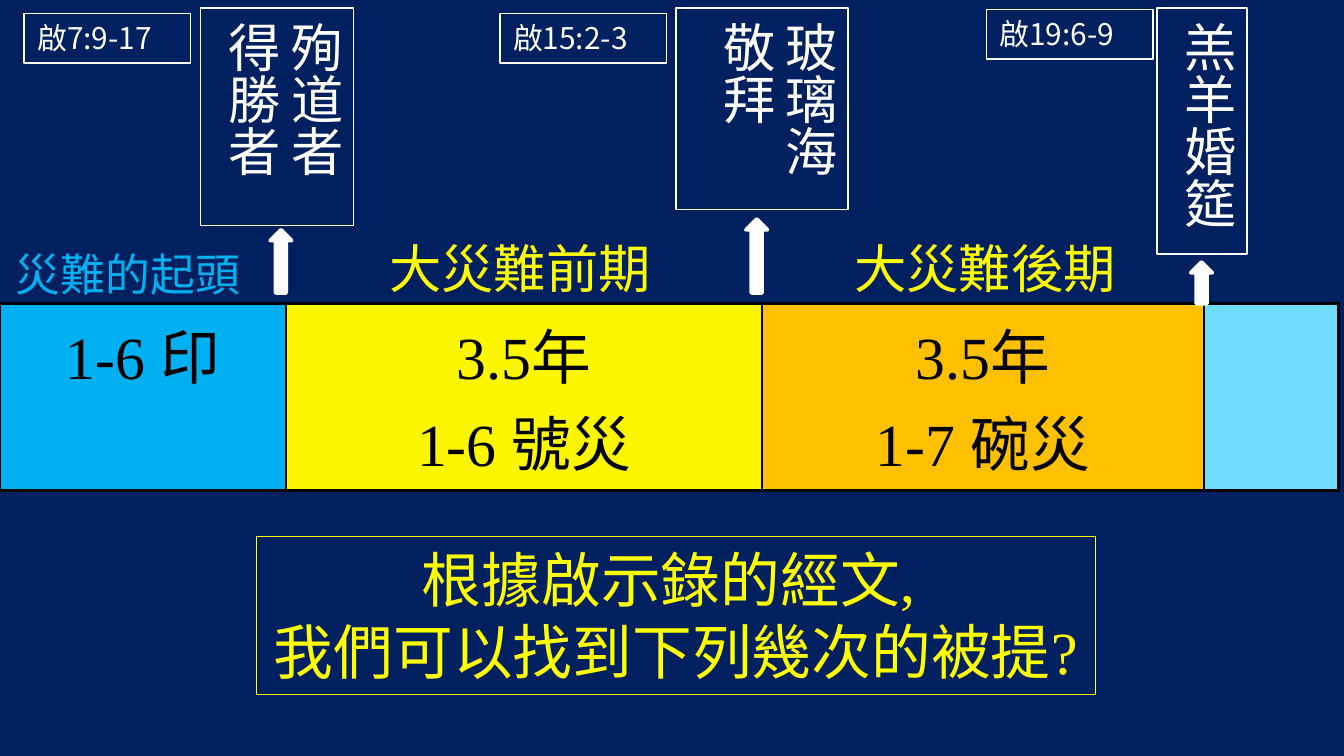
import pptx
import pptx.dml.color
import pptx.enum.shapes
import pptx.enum.text
import pptx.oxml
import pptx.oxml.ns
import pptx.util

Inches = pptx.util.Inches
SHAPES = pptx.enum.shapes.MSO_SHAPE
ALIGN = pptx.enum.text.PP_ALIGN

THEME = {
    "navy": "002060", "white": "FFFFFF", "black": "000000", "yellow": "FFFF00",
    "sky": "00B0F0", "lemon": "FCF600", "amber": "FFC000", "ice": "71DAFF",
    "serif": "Times New Roman", "sans": "Noto Sans CJK JP",
    "large": 32, "medium": 28, "label": 24, "small": 16,
    "thin": 0.75, "border": 1.5, "thick": 2,
}

SLIDE_SIZE = (10, 10 * 9 / 16)
TIMELINE_TOP, TIMELINE_HEIGHT = 2.26, 1.17
ARROW_WIDTH = 0.16
REFERENCE_SIZE = (1.24, 0.37)
EVENT_TOP = 0.06

# column width, fill, lines of text
PERIODS = [
    (2.13, "sky", ["1-6 印"]),
    (3.54, "lemon", ["3.5年", "1-6 號災"]),
    (3.29, "amber", ["3.5年", "1-7 碗災"]),
    (1.00, "ice", []),
]
# left, top, width, height, text, size, colour
HEADINGS = [
    (2.80, 1.71, 2.17, 0.57, "大災難前期", "medium", "yellow"),
    (6.26, 1.71, 2.17, 0.57, "大災難後期", "medium", "yellow"),
    (0.02, 1.79, 1.88, 0.50, "災難的起頭", "label", "sky"),
]
# verse and its place, event columns with left and size, arrow left, top and bottom
EVENTS = [
    {"verse": "啟7:9-17", "verse_at": (0.18, 0.10), "columns": ["殉道者", "得勝者"],
     "left": 1.49, "size": (1.14, 1.62), "arrow": (2.01, 1.71, 2.18)},
    {"verse": "啟15:2-3", "verse_at": (3.72, 0.10), "columns": ["玻璃海", "敬拜"],
     "left": 5.03, "size": (1.28, 1.50), "arrow": (5.55, 1.63, 2.18)},
    {"verse": "啟19:6-9", "verse_at": (7.34, 0.07), "columns": ["羔羊婚筵"],
     "left": 8.61, "size": (0.67, 1.83), "arrow": (8.86, 1.95, TIMELINE_TOP)},
]
QUESTION = "根據啟示錄的經文, \v我們可以找到下列幾次的被提?"
QUESTION_AT = (1.91, 3.99, 6.24, 1.18)


def colour(name):
    return pptx.dml.color.RGBColor.from_string(THEME[name])


def write(frame, lines, *, size, ink, font="serif", align=ALIGN.LEFT):
    for index, line in enumerate(lines):
        para = frame.paragraphs[0] if index == 0 else frame.add_paragraph()
        para.text = line
        para.alignment = align
        for span in para.runs:
            span.font.size = pptx.util.Pt(THEME[size])
            span.font.name = THEME[font]
            span.font.color.rgb = colour(ink)


def fit_frame(box, *, wrap=False, vertical=False):
    frame = box.text_frame
    frame.word_wrap = wrap
    frame.auto_size = pptx.enum.text.MSO_AUTO_SIZE.SHAPE_TO_FIT_TEXT
    frame.vertical_anchor = pptx.enum.text.MSO_ANCHOR.TOP
    if vertical:
        frame._txBody.bodyPr.set("vert", "eaVert")
    return frame


def add_shape(page, kind, place, *, line, width="thin", fill=None):
    shape = page.shapes.add_shape(kind, *map(Inches, place))
    shape.shadow.inherit = False
    shape.line.color.rgb = colour(line)
    shape.line.width = pptx.util.Pt(THEME[width])
    if fill:
        shape.fill.solid()
        shape.fill.fore_color.rgb = colour(fill)
    else:
        shape.fill.background()
    return shape


def add_borders(cell):
    properties = cell._tc.get_or_add_tcPr()
    width = pptx.util.Pt(THEME["border"])
    for index, side in enumerate(("lnL", "lnR", "lnT", "lnB")):
        properties.insert(index, pptx.oxml.parse_xml(
            f'<a:{side} {pptx.oxml.ns.nsdecls("a")} w="{width}"><a:solidFill>'
            f'<a:srgbClr val="{THEME["black"]}"/></a:solidFill></a:{side}>'))


def add_timeline(page):
    total = sum(width for width, _, _ in PERIODS)
    table = page.shapes.add_table(
        1, len(PERIODS), 0, Inches(TIMELINE_TOP), Inches(total), Inches(TIMELINE_HEIGHT)).table
    for index, (width, fill, lines) in enumerate(PERIODS):
        table.columns[index].width = Inches(width)
        cell = table.cell(0, index)
        add_borders(cell)
        cell.fill.solid()
        cell.fill.fore_color.rgb = colour(fill)
        write(cell.text_frame, lines, size="large", ink="black", align=ALIGN.CENTER)


def add_event(page, event):
    box = add_shape(page, SHAPES.RECTANGLE, (event["left"], EVENT_TOP, *event["size"]),
                    line="white")
    write(fit_frame(box, wrap=True, vertical=True), event["columns"],
          size="medium", ink="white", font="sans")

    left, top, bottom = event["arrow"]
    arrow = add_shape(page, SHAPES.DOWN_ARROW, (left, top, ARROW_WIDTH, bottom - top),
                      line="white", width="thick", fill="white")
    arrow.rotation = 180

    verse = add_shape(page, SHAPES.RECTANGLE, (*event["verse_at"], *REFERENCE_SIZE),
                      line="white")
    write(fit_frame(verse), [event["verse"]], size="small", ink="white", font="sans")


def main():
    deck = pptx.Presentation()
    deck.slide_width, deck.slide_height = map(Inches, SLIDE_SIZE)
    page = deck.slides.add_slide(deck.slide_layouts[6])
    page.background.fill.solid()
    page.background.fill.fore_color.rgb = colour("navy")

    add_timeline(page)
    for *place, text, size, ink in HEADINGS:
        heading = page.shapes.add_textbox(*map(Inches, place))
        write(fit_frame(heading), [text], size=size, ink=ink)
    for event in EVENTS:
        add_event(page, event)
    question = add_shape(page, SHAPES.RECTANGLE, QUESTION_AT, line="yellow")
    write(fit_frame(question), [QUESTION], size="large", ink="yellow", align=ALIGN.CENTER)

    deck.save("out.pptx")


if __name__ == "__main__":
    main()
